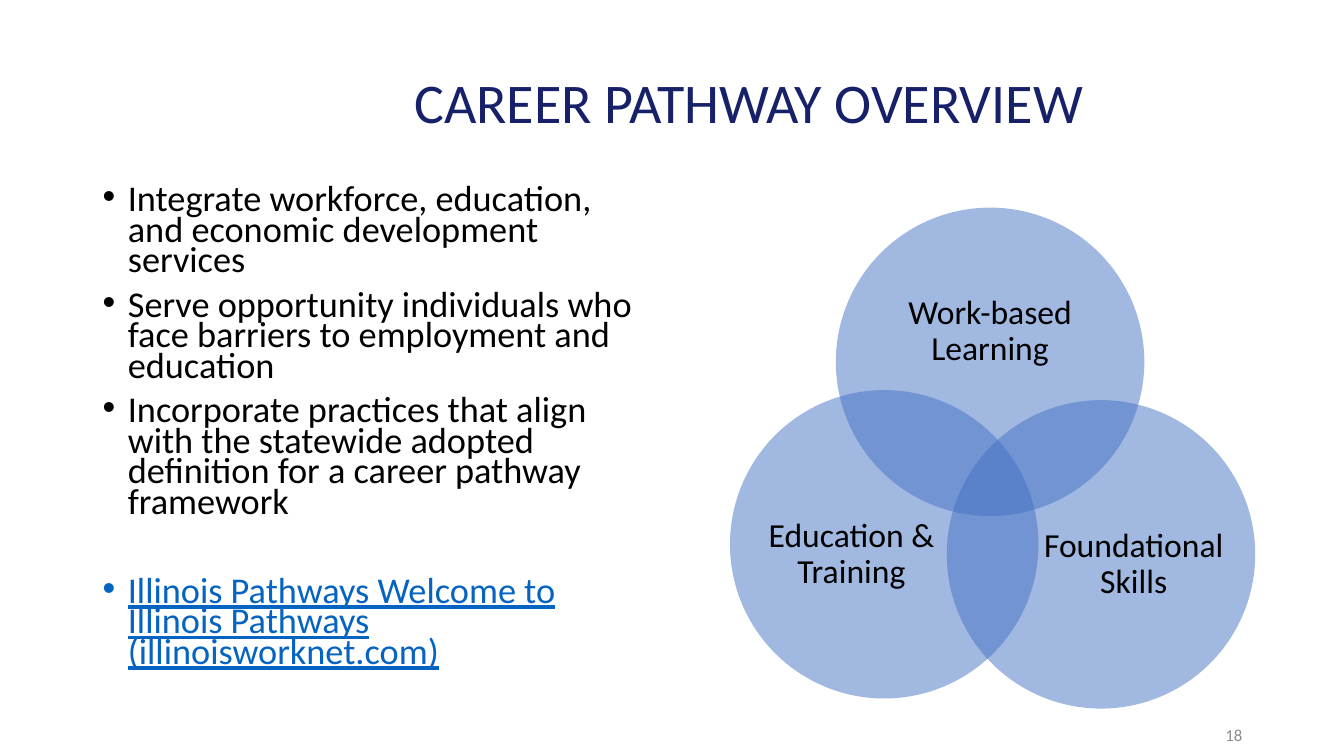
from pptx import Presentation
from pptx.dml.color import RGBColor
from pptx.enum.shapes import MSO_SHAPE as Shape
from pptx.enum.text import MSO_ANCHOR as Anchor, PP_ALIGN as Align
from pptx.oxml.ns import qn
from pptx.util import Inches, Pt
from lxml import etree

NAVY = RGBColor(0x17, 0x21, 0x69)
BLACK = RGBColor(0, 0, 0)
BLUE = RGBColor(0x44, 0x72, 0xC4)
LINK = RGBColor(0x05, 0x63, 0xC1)
GREY = RGBColor(0x8C, 0x8C, 0x8C)
FACE = "Calibri"

POINTS = [
    "Integrate workforce, education, and economic development services",
    "Serve opportunity individuals who face barriers to employment and education",
    "Incorporate practices that align with the statewide adopted definition "
    "for a career pathway framework",
]
SITE = "Illinois Pathways Welcome to Illinois Pathways (illinoisworknet.com)"

# Circle offset, then label offset and size, all within the diagram
RINGS = [
    ("Work-based Learning", (1.05, 0), (1.46, 0.54, 2.24, 1.38)),
    ("Foundational Skills", (2.15, 1.91), (3.09, 2.7, 1.83, 1.68)),
    ("Education & Training", (0, 1.81), (0.29, 2.6, 1.83, 1.68)),
]
RING = 3.06


def style(para, size, color, align=Align.LEFT, space=None):
    para.alignment = align
    para.line_spacing = space
    for run in para.runs:
        run.font.size = Pt(size)
        run.font.name = FACE
        run.font.color.rgb = color


def add_box(slide, box):
    frame = slide.shapes.add_textbox(*map(Inches, box)).text_frame
    frame.word_wrap = True
    return frame


def add_title(slide, box):
    title = slide.shapes.title
    title.left, title.top, title.width, title.height = map(Inches, box)
    frame = title.text_frame
    frame.text = "CAREER PATHWAY OVERVIEW"
    frame.vertical_anchor = Anchor.MIDDLE
    style(frame.paragraphs[0], 40, NAVY, space=0.9)


def add_point(para, text, color):
    para.text = text
    props = para._p.get_or_add_pPr()
    props.set("marL", str(Inches(0.25)))
    props.set("indent", str(Inches(-0.25)))
    font = etree.SubElement(props, qn("a:buFont"))
    font.set("typeface", "Arial")
    etree.SubElement(props, qn("a:buChar")).set("char", "•")
    style(para, 25.9, color, space=0.7)


def add_list(slide, box):
    frame = add_box(slide, box)
    for i, text in enumerate(POINTS):
        para = frame.add_paragraph() if i else frame.paragraphs[0]
        add_point(para, text, BLACK)
        para.space_before = Pt(10 if i else 0)
    # Site name, set apart from the points
    para = frame.add_paragraph()
    add_point(para, SITE, LINK)
    para.space_before = Pt(42)
    para.runs[0].font.underline = True


def add_venn(slide, box):
    left, top = box
    for text, (x, y), (dx, dy, wide, high) in RINGS:
        # Half-clear circle
        ring = slide.shapes.add_shape(
            Shape.OVAL, Inches(left + x), Inches(top + y),
            Inches(RING), Inches(RING))
        ring.shadow.inherit = False
        ring.line.fill.background()
        ring.fill.solid()
        ring.fill.fore_color.rgb = BLUE
        color = ring.fill._xPr.find(qn("a:solidFill"))[0]
        etree.SubElement(color, qn("a:alpha")).set("val", "50000")
        # Label
        frame = add_box(slide, (left + dx, top + dy, wide, high))
        frame.margin_left = frame.margin_right = 0
        frame.margin_top = frame.margin_bottom = 0
        frame.vertical_anchor = Anchor.MIDDLE
        frame.text = text
        style(frame.paragraphs[0], 24, BLACK, Align.CENTER, 0.9)


def add_page(slide, box):
    frame = add_box(slide, box)
    frame.vertical_anchor = Anchor.MIDDLE
    frame.text = "18"
    style(frame.paragraphs[0], 12, GREY, Align.RIGHT)


def main():
    deck = Presentation()
    deck.slide_width, deck.slide_height = Inches(13.33), Inches(7.5)
    slide = deck.slides.add_slide(deck.slide_layouts[5])
    add_title(slide, (4.01, 0.66, 8.33, 0.77))
    add_list(slide, (0.92, 1.81, 5.67, 5.44))
    add_page(slide, (9.42, 7.09, 3, 0.4))
    add_venn(slide, (7.24, 2.06))
    deck.save("out.pptx")


if __name__ == "__main__":
    main()
